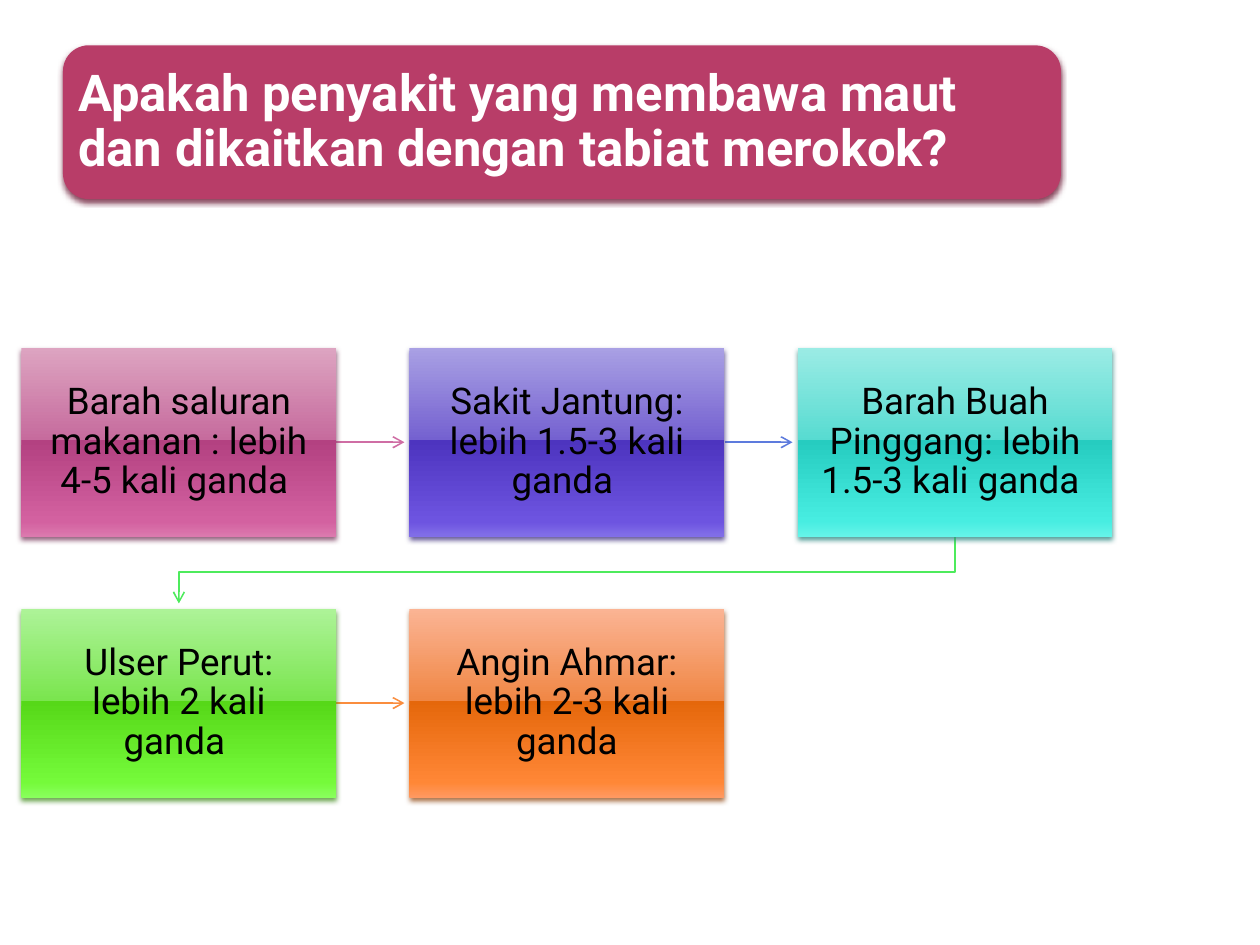
from dataclasses import dataclass

from pptx import Presentation
from pptx.dml.color import RGBColor
from pptx.enum.shapes import MSO_CONNECTOR, MSO_SHAPE
from pptx.enum.text import MSO_ANCHOR, PP_ALIGN
from pptx.oxml.ns import qn
from pptx.oxml.xmlchemy import OxmlElement
from pptx.util import Pt

SCALE = 9144  # EMU per px, 100 px to the inch


@dataclass(frozen=True)
class Theme:
    font: str = "Roboto"
    head: int = 29
    body: int = 21
    white: str = "FFFFFF"
    black: str = "000000"
    rose: str = "B83D68"
    shade: str = "722640"
    line: float = 0.9
    stops: tuple = (0, 49, 49, 92, 100)
    fades: tuple = (
        ("DDA4C1", "C66B9D", "B34181", "D361A0", "DC79AE"),
        ("A9A0E4", "7461D0", "4D34BF", "6D54E0", "826FE8"),
        ("9BECE5", "57DBD1", "26CCC0", "47EDE1", "66F4E9"),
        ("ADF398", "7AE54E", "56D818", "75FA3A", "89FF5D"),
        ("FBB494", "F08745", "E5670B", "FF8736", "FF9961"),
    )
    shades: tuple = ("804365", "4A3C86", "358D87", "4E942D", "9A5726")
    links: tuple = ("CF6DA4", "5D7BDD", "4DEB5C", "FA8D3D")


def px(*nums):
    return [n * SCALE for n in nums]


def add(parent, tag, **attrs):
    node = OxmlElement(tag)
    for key, val in attrs.items():
        node.set(key, str(val))
    parent.append(node)
    return node


class Painter:
    def __init__(self, slide, theme):
        self.slide, self.theme = slide, theme

    def label(self, shape, text, size, color, pad, align, bold=False):
        frame = shape.text_frame
        frame.text = text
        frame.word_wrap = True
        frame.vertical_anchor = MSO_ANCHOR.MIDDLE
        frame.margin_left, frame.margin_top, frame.margin_right, frame.margin_bottom = px(*[pad] * 4)
        para = frame.paragraphs[0]
        para.alignment = align
        para.line_spacing = 0.9
        font = para.runs[0].font
        font.name, font.size, font.bold = self.theme.font, Pt(size), bold
        font.color.rgb = RGBColor.from_string(color)

    def panel(self, kind, box, shade):
        """Add a borderless shape with a soft shadow below it."""
        shape = self.slide.shapes.add_shape(kind, *px(*box))
        shape.line.fill.background()
        shape.shadow.inherit = False
        glow = add(shape.element.spPr.find(qn("a:effectLst")), "a:outerShdw",
                   blurRad=Pt(3.1), dist=Pt(2), dir=5400000, rotWithShape=0)
        add(add(glow, "a:srgbClr", val=shade), "a:alpha", val=83000)
        return shape

    def title(self, text, box):
        look = self.theme
        panel = self.panel(MSO_SHAPE.ROUNDED_RECTANGLE, box, look.shade)
        panel.fill.solid()
        panel.fill.fore_color.rgb = RGBColor.from_string(look.rose)
        head = self.slide.shapes.title
        head.left, head.top, head.width, head.height = px(*box)
        head.element.addprevious(panel.element)
        self.label(head, text, look.head, look.white, 12, PP_ALIGN.LEFT, True)

    def card(self, text, box, fade, shade):
        look = self.theme
        card = self.panel(MSO_SHAPE.RECTANGLE, box, shade)
        card.fill.gradient()
        card.fill.gradient_angle = 270  # top to bottom
        stops = card.element.spPr.find(".//" + qn("a:gsLst"))
        for old in list(stops):
            stops.remove(old)
        for pos, color in zip(look.stops, fade):
            add(add(stops, "a:gs", pos=pos * 1000), "a:srgbClr", val=color)
        self.label(card, text, look.body, look.black, 16, PP_ALIGN.CENTER)

    def arrow(self, points, color):
        """Draw a straight connector, or a bent line if there are more points."""
        shapes = self.slide.shapes
        if len(points) == 2:
            line = shapes.add_connector(MSO_CONNECTOR.STRAIGHT, *px(*points[0], *points[1]))
        else:
            route = shapes.build_freeform(*points[0], scale=SCALE)
            route.add_line_segments(points[1:], close=False)
            line = route.convert_to_shape()
            line.fill.background()
        line.line.color.rgb = RGBColor.from_string(color)
        line.line.width = Pt(self.theme.line)
        props = line.element.spPr
        add(props.find(qn("a:ln")), "a:tailEnd", type="arrow")
        add(props, "a:effectLst")


def main():
    deck = Presentation()
    deck.slide_width, deck.slide_height = px(1000, 750)
    theme = Theme()
    pen = Painter(deck.slides.add_slide(deck.slide_layouts[5]), theme)
    pen.title("Apakah penyakit yang membawa maut dan dikaitkan dengan tabiat merokok?",
              (50, 36, 792, 122))

    texts = (
        "Barah saluran makanan : lebih 4-5 kali ganda ",
        "Sakit Jantung: lebih 1.5-3 kali ganda ",
        "Barah Buah Pinggang: lebih 1.5-3 kali ganda ",
        "Ulser Perut: lebih 2 kali ganda ",
        "Angin Ahmar: lebih 2-3 kali ganda",
    )
    cols, wide, high = 3, 250, 150
    left, top, step, drop, gap = 17, 276, 308, 207, 4
    spots = [(left + i % cols * step, top + i // cols * drop) for i in range(len(texts))]

    for (x, y), (nx, ny), color in zip(spots, spots[1:], theme.links):
        if y == ny:
            mid = y + high // 2
            points = [(x + wide, mid), (nx - gap, mid)]
        else:
            start, end = x + wide // 2, nx + wide // 2
            turn = (y + high + ny) // 2
            points = [(start, y + high), (start, turn), (end, turn), (end, ny - gap)]
        pen.arrow(points, color)

    for text, spot, fade, shade in zip(texts, spots, theme.fades, theme.shades):
        pen.card(text, (*spot, wide, high), fade, shade)
    deck.save("out.pptx")


if __name__ == "__main__":
    main()
